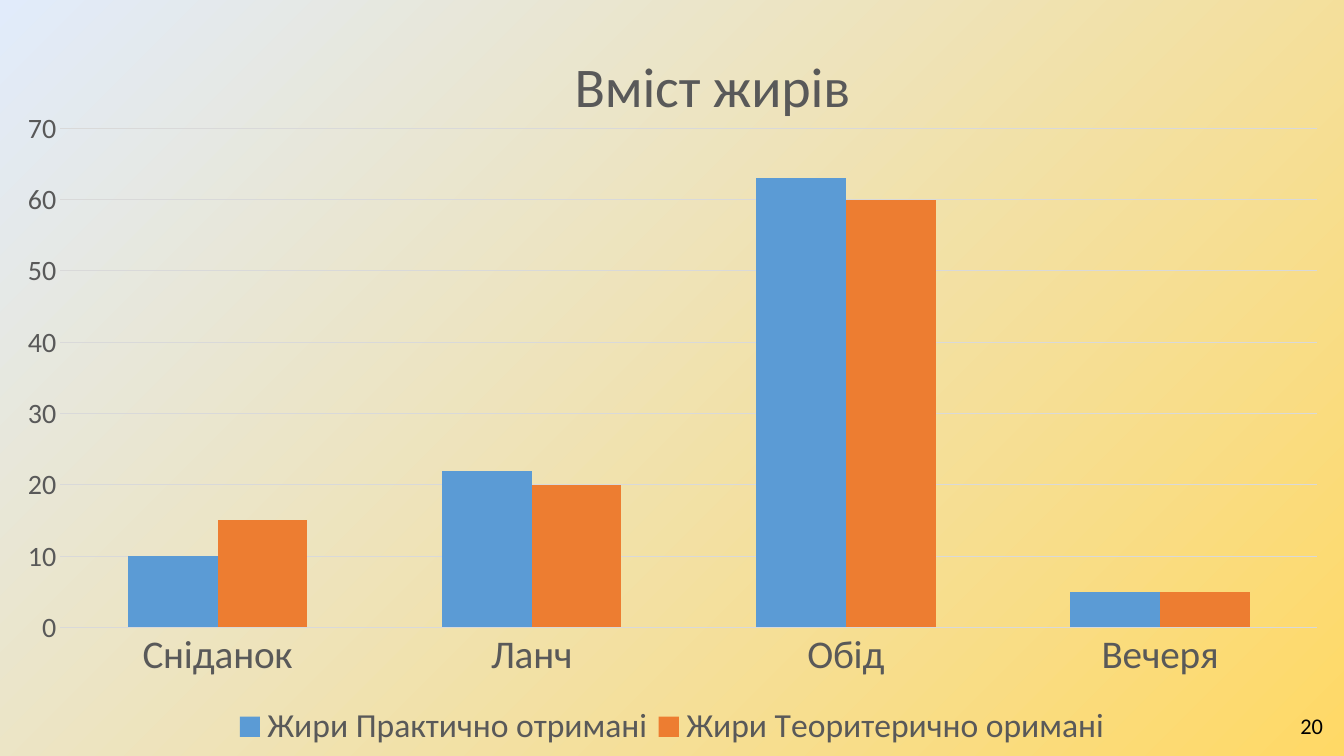
import pptx
import pptx.chart.data
import pptx.dml.color
import pptx.enum.chart
import pptx.enum.text
import pptx.oxml
import pptx.oxml.ns
import pptx.util

GRAY = "595959"
NAMESPACES = pptx.oxml.ns.nsdecls("c", "a")


def color(hex_string):
    return pptx.dml.color.RGBColor.from_string(hex_string)


def place(parent, index, **shares):
    """Position a chart part by shares of the chart's size."""
    for layout in parent.findall(pptx.oxml.ns.qn("c:layout")):
        parent.remove(layout)
    target = '<c:layoutTarget val="inner"/>' if index == 0 else ""
    modes = "".join(f'<c:{key}Mode val="edge"/>' for key in "xy")
    values = "".join(f'<c:{key} val="{share}"/>' for key, share in shares.items())
    parent.insert(index, pptx.oxml.parse_xml(
        f"<c:layout {NAMESPACES}><c:manualLayout>{target}{modes}{values}"
        "</c:manualLayout></c:layout>"))


presentation = pptx.Presentation()
presentation.slide_width = pptx.util.Inches(13.33)
presentation.slide_height = pptx.util.Inches(7.5)
slide = presentation.slides.add_slide(presentation.slide_layouts[6])

# Chart data
fat_data = pptx.chart.data.CategoryChartData()
fat_data.categories = ["Сніданок", "Ланч", "Обід", "Вечеря"]
fat_data.add_series("Жири Практично отримані", [10, 22, 63, 5])
fat_data.add_series("Жири Теоритерично оримані", [15, 20, 60, 5])
chart = slide.shapes.add_chart(
    pptx.enum.chart.XL_CHART_TYPE.COLUMN_CLUSTERED, 0, 0,
    presentation.slide_width, presentation.slide_height, fat_data).chart
chart.font.name = "Calibri"
chart.font.size = pptx.util.Pt(10)

# Title and legend
chart.has_title = True
chart.chart_title.text_frame.text = "Вміст жирів"
title_font = chart.chart_title.text_frame.paragraphs[0].font
title_font.bold = False
chart.has_legend = True
chart.legend.position = pptx.enum.chart.XL_LEGEND_POSITION.BOTTOM
chart.legend.include_in_layout = False

# Columns
plot = chart.plots[0]
plot.gap_width = 150
plot.overlap = 0
plot.vary_by_categories = False
for series, fill_color in zip(plot.series, ["5B9BD5", "ED7D31"]):
    series.format.fill.solid()
    series.format.fill.fore_color.rgb = color(fill_color)

# Axes
for axis in (chart.category_axis, chart.value_axis):
    axis.major_tick_mark = pptx.enum.chart.XL_TICK_MARK.NONE
    axis.minor_tick_mark = pptx.enum.chart.XL_TICK_MARK.NONE
    axis.format.line.fill.background()
value_axis = chart.value_axis
value_axis.minimum_scale, value_axis.maximum_scale = 0, 70
value_axis.major_unit = 10
value_axis.has_major_gridlines = True
value_axis.major_gridlines.format.line.color.rgb = color("D9D9D9")
value_axis.major_gridlines.format.line.width = pptx.util.Pt(0.75)

for font, size in [(title_font, 40), (chart.legend.font, 24),
                   (chart.category_axis.tick_labels.font, 28),
                   (value_axis.tick_labels.font, 20)]:
    font.name = "Calibri"
    font.size = pptx.util.Pt(size)
    font.color.rgb = color(GRAY)

# Places of the chart parts
chart_element = chart.element.chart if hasattr(chart, "element") else chart._chartSpace.chart
place(chart_element.find(pptx.oxml.ns.qn("c:title")), 1, x=0.42, y=0.05)
place(chart_element.plotArea, 0, x=0.045, y=0.17, w=0.935, h=0.66)
place(chart_element.find(pptx.oxml.ns.qn("c:legend")), 1, x=0.17, y=0.93, w=0.66, h=0.07)

# Diagonal gradient behind the chart
chart_element.addnext(pptx.oxml.parse_xml(
    f'<c:spPr {NAMESPACES}><a:gradFill><a:gsLst>'
    '<a:gs pos="0"><a:srgbClr val="FFD966"/></a:gs>'
    '<a:gs pos="100000"><a:srgbClr val="E1EBFB"/></a:gs>'
    '</a:gsLst><a:lin ang="13500000" scaled="0"/></a:gradFill>'
    '<a:ln><a:noFill/></a:ln></c:spPr>'))

# Slide number
number_box = slide.shapes.add_textbox(*map(pptx.util.Inches, (10.22, 7, 3, 0.4)))
number_frame = number_box.text_frame
number_frame.word_wrap = True
number_frame.vertical_anchor = pptx.enum.text.MSO_ANCHOR.MIDDLE
number_frame.text = "20"
paragraph = number_frame.paragraphs[0]
paragraph.alignment = pptx.enum.text.PP_ALIGN.RIGHT
paragraph.font.name = "Calibri"
paragraph.font.size = pptx.util.Pt(16)
paragraph.font.color.rgb = color("000000")

presentation.save("out.pptx")
